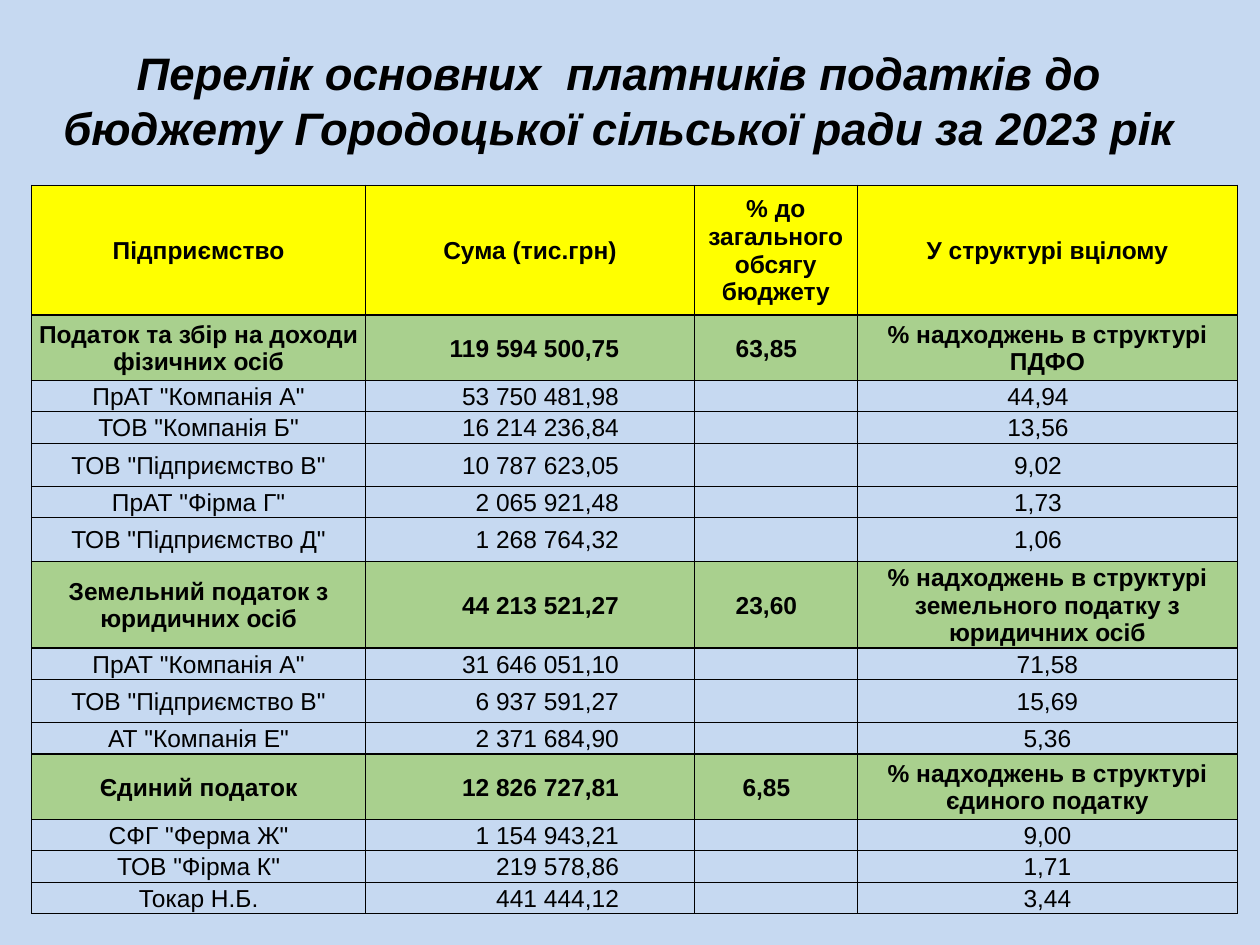
"""Build a slide listing the main taxpayers of a village council budget."""
from lxml.etree import SubElement
from pptx import Presentation
from pptx.dml.color import RGBColor
from pptx.enum.text import MSO_ANCHOR, MSO_AUTO_SIZE, PP_ALIGN
from pptx.oxml.ns import qn
from pptx.util import Cm, Pt

BLACK = RGBColor(0x00, 0x00, 0x00)
BLUE = RGBColor(0xC6, 0xD9, 0xF1)
GREEN = RGBColor(0xA9, 0xD0, 0x8E)
YELLOW = RGBColor(0xFF, 0xFF, 0x00)

TITLE = "Перелік основних  платників податків до бюджету Городоцької сільської ради за 2023 рік"
HEAD = ("Підприємство", "Сума (тис.грн)", "% до загального обсягу бюджету", "У структурі вцілому")
GROUPS = [
    (("Податок та збір на доходи фізичних осіб", "119 594 500,75", "63,85",
      "% надходжень в структурі ПДФО"), 1.32, 0.41, [
        ('ПрАТ "Компанія А"', "53 750 481,98", "44,94", 0.43),
        ('ТОВ "Компанія Б"', "16 214 236,84", "13,56", 0.43),
        ('ТОВ "Підприємство В"', "10 787 623,05", "9,02", 0.87),
        ('ПрАТ "Фірма Г"', "2 065 921,48", "1,73", 0.43),
        ('ТОВ "Підприємство Д"', "1 268 764,32", "1,06", 0.88)]),
    (("Земельний податок з юридичних осіб", "44 213 521,27", "23,60",
      "% надходжень в структурі земельного податку з юридичних осіб"), 1.75, 0.03, [
        ('ПрАТ "Компанія А"', "31 646 051,10", "71,58", 0.43),
        ('ТОВ "Підприємство В"', "6 937 591,27", "15,69", 0.87),
        ('АТ "Компанія Е"', "2 371 684,90", "5,36", 0.45)]),
    (("Єдиний податок", "12 826 727,81", "6,85",
      "% надходжень в структурі єдиного податку"), 1.32, 0.03, [
        ('СФГ "Ферма Ж"', "1 154 943,21", "9,00", 0.43),
        ('ТОВ "Фірма К"', "219 578,86", "1,71", 0.43),
        ("Токар Н.Б.", "441 444,12", "3,44", 0.43)]),
]
WIDTHS = (6.73, 6.63, 3.28, 7.67)
THIN, THICK = 0.5, 1
INSET, SHIFT, MARGIN = 0.03, 0.41, 1.52


class Deck:
    """Hold the text style and the current slide."""

    def __init__(self, font="Arial"):
        self.font = font
        self.prs = Presentation()
        self.prs.slide_width, self.prs.slide_height = Cm(25.4), Cm(19.05)
        self.slide = self.prs.slides.add_slide(self.prs.slide_layouts[5])
        fill = self.slide.background.fill
        fill.solid()
        fill.fore_color.rgb = BLUE

    def style(self, para, size, bold, italic=False):
        """Format every run of a paragraph."""
        for run in para.runs:
            font = run.font
            font.name, font.size = self.font, Pt(size)
            font.bold, font.italic = bold, italic
            font.color.rgb = BLACK

    def title(self, text, left, top, width, height):
        """Fill and place the title."""
        box = self.slide.shapes.title
        box.left, box.top, box.width, box.height = map(Cm, (left, top, width, height))
        box.fill.solid()
        box.fill.fore_color.rgb = BLUE
        box.line.color.rgb = BLUE
        box.line.width = Pt(2)
        frame = box.text_frame
        frame.text = text
        frame.word_wrap, frame.auto_size = True, MSO_AUTO_SIZE.NONE
        frame.vertical_anchor = MSO_ANCHOR.MIDDLE
        frame.margin_right = Cm(0.53)
        para = frame.paragraphs[0]
        para.alignment = PP_ALIGN.CENTER
        self.style(para, 26, True, True)

    def border(self, cell, sides):
        """Draw the cell sides, given as widths in points."""
        props = cell._tc.get_or_add_tcPr()
        for side, width in zip("LRTB", sides):
            line = SubElement(props, qn(f"a:ln{side}"), w=str(Pt(width)))
            fill = SubElement(line, qn("a:solidFill"))
            SubElement(fill, qn("a:srgbClr"), val=str(BLACK))

    def cell(self, cell, text, color, align, right):
        """Write one cell; a coloured cell is bold."""
        cell.margin_left = cell.margin_top = Cm(INSET)
        cell.margin_bottom, cell.margin_right = 0, Cm(right)
        cell.vertical_anchor = MSO_ANCHOR.MIDDLE
        para = cell.text_frame.paragraphs[0]
        if text:
            para.text = text
            para.alignment = align
            self.style(para, 14, color is not None)
        else:
            para._p.get_or_add_endParaRPr().set("sz", "1400")
        if color is None:
            cell.fill.background()
        else:
            cell.fill.solid()
            cell.fill.fore_color.rgb = color

    def table(self, rows, left, top):
        """Add the table from rows of texts, height, colour and right inset."""
        area = map(Cm, (left, top, sum(WIDTHS), sum(row[1] for row in rows)))
        grid = self.slide.shapes.add_table(len(rows), len(WIDTHS), *area).table
        grid.first_row = grid.horz_banding = False
        for col, width in zip(grid.columns, WIDTHS):
            col.width = Cm(width)
        tints = [row[2] for row in rows] + [None]
        for i, (texts, height, color, inset) in enumerate(rows):
            grid.rows[i].height = Cm(height)
            green = color == GREEN
            above = THICK if green or i and tints[i - 1] == GREEN else THIN
            below = THICK if green or tints[i + 1] == GREEN else THIN
            for j, text in enumerate(texts):
                cell = grid.cell(i, j)
                first = THICK if green and j == 0 else THIN
                last = THICK if green and j == len(texts) - 1 else THIN
                self.border(cell, (first, last, above, below))
                sums = j == 1 and color != YELLOW
                right = MARGIN if sums else SHIFT if green and j == 2 else INSET
                if j == 3:
                    right = inset
                align = PP_ALIGN.RIGHT if sums else PP_ALIGN.CENTER
                self.cell(cell, text, color, align, right)


def main():
    """Make and save the deck."""
    rows = [(HEAD, 2.62, YELLOW, INSET)]
    for head, height, inset, firms in GROUPS:
        rows.append((head, height, GREEN, INSET))
        rows += [((name, total, "", share), size, None, inset)
                 for name, total, share, size in firms]
    deck = Deck()
    deck.title(TITLE, 0.33, 0.76, 24.59, 2.51)
    deck.table(rows, 0.64, 3.73)
    deck.prs.save("out.pptx")


if __name__ == "__main__":
    main()
